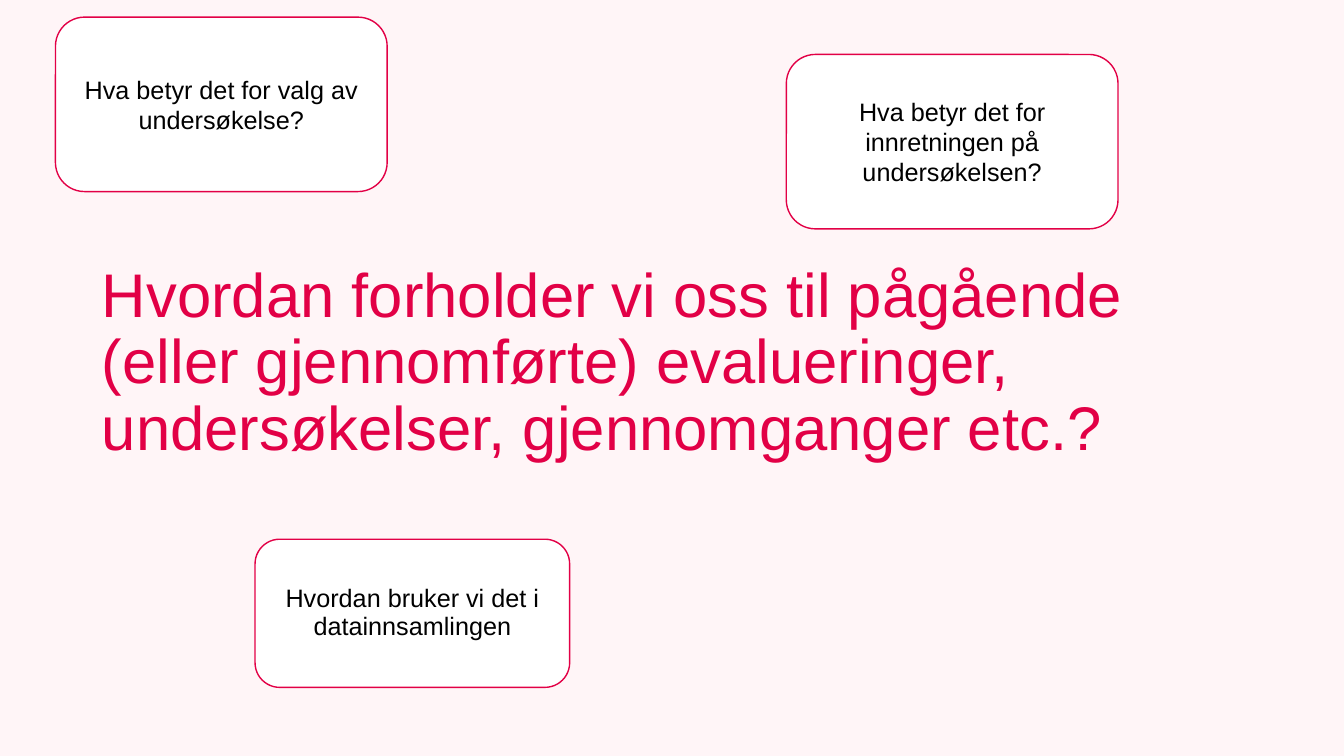
from dataclasses import dataclass

from pptx import Presentation
from pptx.dml.color import RGBColor
from pptx.enum.shapes import MSO_SHAPE
from pptx.enum.text import MSO_ANCHOR, MSO_AUTO_SIZE, PP_ALIGN
from pptx.util import Inches, Pt

ROUNDED = MSO_SHAPE.ROUNDED_RECTANGLE
MIDDLE, BOTTOM = MSO_ANCHOR.MIDDLE, MSO_ANCHOR.BOTTOM
LEFT, CENTER = PP_ALIGN.LEFT, PP_ALIGN.CENTER
NO_AUTOFIT = MSO_AUTO_SIZE.NONE
TITLE_ONLY = 5


@dataclass(frozen=True)
class Theme:
    font: str = "Arial"
    background: RGBColor = RGBColor(0xFF, 0xF5, 0xF7)
    accent: RGBColor = RGBColor(0xE2, 0x00, 0x46)
    card: RGBColor = RGBColor(0xFF, 0xFF, 0xFF)
    text: RGBColor = RGBColor(0, 0, 0)
    title_size: Pt = Pt(44)
    card_size: Pt = Pt(18)
    outline: Pt = Pt(1)


THEME = Theme()
SLIDE_SIZE = Inches(13.33), Inches(7.5)

TITLE = ("Hvordan forholder vi oss til pågående (eller gjennomførte) "
         "evalueringer, undersøkelser, gjennomganger etc.?")

# Left, top, width and height in percent of the slide
TITLE_AREA = (6.83, 7.2, 86.27, 54.8)
UPPER_CARD = (24.68, 23.07)
LOWER_CARD = (23.41, 19.6)
QUESTIONS = [  # wording, area, line spacing
    ("Hva betyr det for valg av undersøkelse?", (4.13, 2.27, *UPPER_CARD), 1.0),
    ("Hva betyr det for innretningen på undersøkelsen?", (58.51, 7.2, *UPPER_CARD), 1.0),
    ("Hvordan bruker vi det i datainnsamlingen", (18.98, 71.33, *LOWER_CARD), 0.9),
]


def set_attributes(target, values):
    for name, value in values.items():
        setattr(target, name, value)


def to_lengths(area):
    """Turn percentages of the slide into left, top, width and height."""
    return [round(SLIDE_SIZE[i % 2] * share / 100) for i, share in enumerate(area)]


def write_text(shape, text, anchor, alignment, line_spacing, size, color):
    frame = shape.text_frame
    frame.text = text
    set_attributes(frame, {"word_wrap": True, "auto_size": NO_AUTOFIT,
                           "vertical_anchor": anchor})
    paragraph = frame.paragraphs[0]
    set_attributes(paragraph, {"alignment": alignment, "line_spacing": line_spacing,
                               "space_before": Pt(0)})
    font = paragraph.runs[0].font
    set_attributes(font, {"name": THEME.font, "size": size})
    font.color.rgb = color


def add_title(slide):
    title = slide.shapes.title
    set_attributes(title, dict(zip(("left", "top", "width", "height"),
                                   to_lengths(TITLE_AREA))))
    write_text(title, TITLE, BOTTOM, LEFT, 0.9, THEME.title_size, THEME.accent)


def add_card(slide, text, area, line_spacing):
    card = slide.shapes.add_shape(ROUNDED, *to_lengths(area))
    card.shadow.inherit = False
    card.fill.solid()
    card.fill.fore_color.rgb = THEME.card
    card.line.color.rgb = THEME.accent
    card.line.width = THEME.outline
    write_text(card, text, MIDDLE, CENTER, line_spacing, THEME.card_size, THEME.text)


def main():
    presentation = Presentation()
    presentation.slide_width, presentation.slide_height = SLIDE_SIZE
    slide = presentation.slides.add_slide(presentation.slide_layouts[TITLE_ONLY])
    slide.background.fill.solid()
    slide.background.fill.fore_color.rgb = THEME.background
    add_title(slide)
    for question in QUESTIONS:
        add_card(slide, *question)
    presentation.save("out.pptx")


if __name__ == "__main__":
    main()
